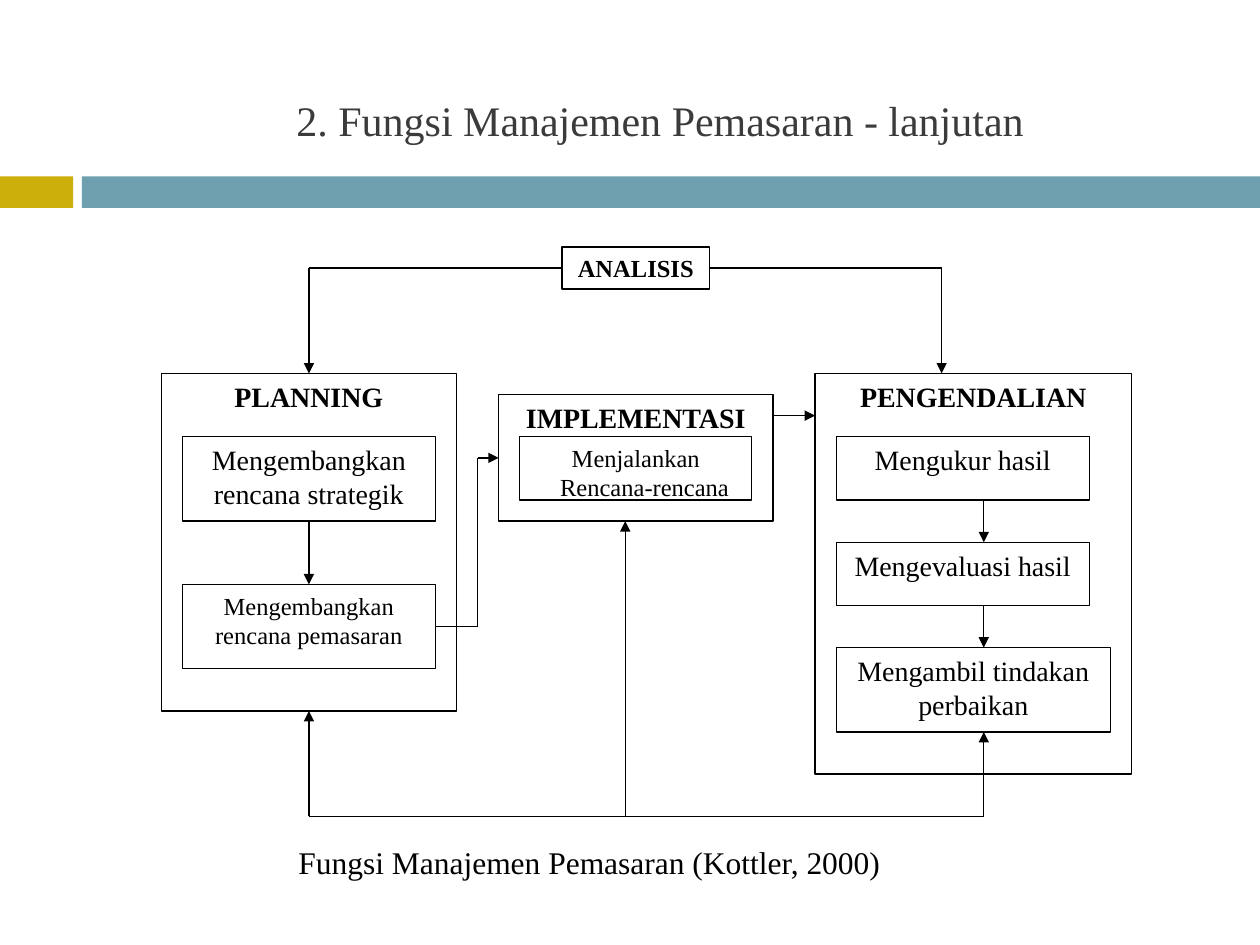
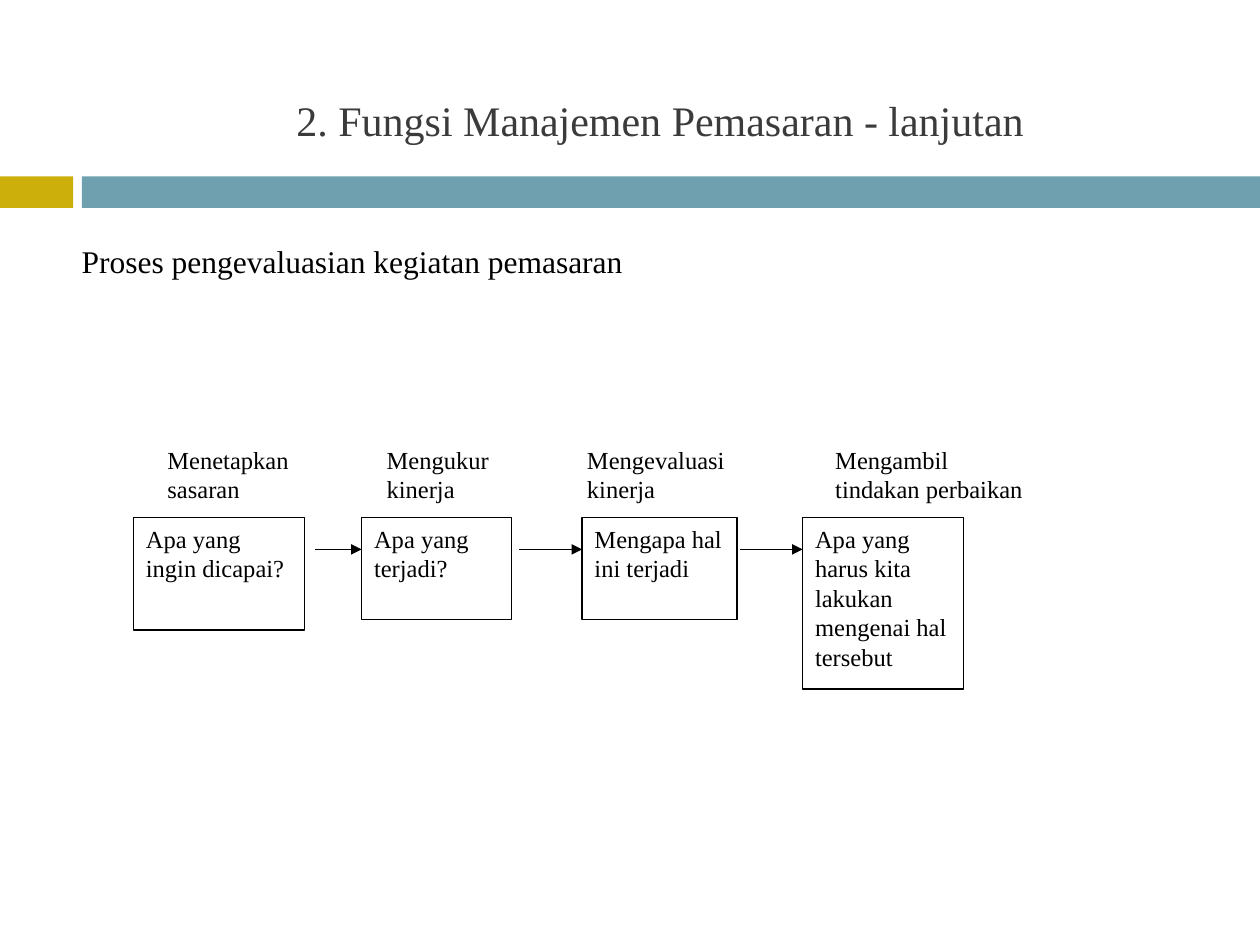
from itertools import pairwise

from lxml import etree
from pptx import Presentation
from pptx import util as u
from pptx.dml.color import RGBColor
from pptx.enum import shapes, text
from pptx.oxml.ns import qn

COLORS = {"ink": "000000", "title": "3B3B3B", "paper": "FFFFFF",
          "gold": "CCAF0A", "teal": "6EA0B0"}
FONT = "Times New Roman"
TITLE = "2. Fungsi Manajemen Pemasaran - lanjutan"
CENTER = text.PP_ALIGN.CENTER
LEFT = text.PP_ALIGN.LEFT
INCHES = (0, 0, 1)                           # left, top and cell size of a grid
FLOW_GRID = (1.28, 1.96, (8.98 - 1.28) / 46)  # 46 columns across the flow chart


def color(name):
    return RGBColor.from_string(COLORS[name])


def write(frame, content, size=14, bold=False, ink="ink", align=LEFT,
          anchor=text.MSO_ANCHOR.TOP, tabs=(), last_indent=0):
    """Fill a text frame, one paragraph for each line of the content."""
    frame.word_wrap = True
    frame.vertical_anchor = anchor
    for number, line in enumerate(content.split("\n")):
        paragraph = frame.add_paragraph() if number else frame.paragraphs[0]
        paragraph.alignment = align
        run = paragraph.add_run()
        run.text = line
        run.font.name, run.font.size, run.font.bold = FONT, u.Pt(size), bold
        run.font.color.rgb = color(ink)
        if tabs:
            stops = etree.SubElement(paragraph._p.get_or_add_pPr(), qn("a:tabLst"))
            for stop in tabs:
                etree.SubElement(stops, qn("a:tab"), pos=str(u.Inches(stop)), algn="l")
    if last_indent:
        paragraph._p.get_or_add_pPr().set("marL", str(u.Inches(last_indent)))


class Deck:
    """Holds the shared style, the current slide and its grid."""

    def __init__(self):
        self.presentation = Presentation()
        self.presentation.slide_width = u.Inches(10)
        self.presentation.slide_height = u.Inches(7.5)
        self.slide = None
        self.grid = INCHES

    def point(self, column, row):
        left, top, cell = self.grid
        return u.Inches(left + column * cell), u.Inches(top + row * cell)

    def area(self, column, row, columns, rows):
        cell = self.grid[2]
        return (*self.point(column, row), u.Inches(columns * cell), u.Inches(rows * cell))

    def new_slide(self):
        self.slide = self.presentation.slides.add_slide(self.presentation.slide_layouts[6])
        self.grid = INCHES
        self.box(0, 1.4, 0.58, 0.25, fill="gold", outline=None)
        self.box(0.65, 1.4, 9.35, 0.25, fill="teal", outline=None)
        self.label(0.78, 0.7, 8.92, 0.5, TITLE, size=24, ink="title",
                   align=CENTER, anchor=text.MSO_ANCHOR.MIDDLE)

    def box(self, *place, content="", fill="paper", outline="ink", **style):
        shape = self.slide.shapes.add_shape(shapes.MSO_SHAPE.RECTANGLE, *self.area(*place))
        shape.shadow.inherit = False
        shape.fill.solid()
        shape.fill.fore_color.rgb = color(fill)
        if outline:
            shape.line.color.rgb = color(outline)
            shape.line.width = u.Pt(0.75)
        else:
            shape.line.fill.background()
        if content:
            write(shape.text_frame, content, **style)

    def label(self, column, row, columns, rows, content, **style):
        shape = self.slide.shapes.add_textbox(*self.area(column, row, columns, rows))
        write(shape.text_frame, content, **style)

    def route(self, *points, arrow=True):
        """Join the points with straight lines; the last may end in an arrow."""
        for start, end in pairwise(points):
            connector = self.slide.shapes.add_connector(
                shapes.MSO_CONNECTOR.STRAIGHT, *self.point(*start), *self.point(*end))
            connector.line.color.rgb = color("ink")
            connector.line.width = u.Pt(0.75)
            etree.SubElement(connector._element.spPr, qn("a:effectLst"))
        if arrow:
            etree.SubElement(connector.line._get_or_add_ln(), qn("a:tailEnd"), type="triangle")


def functions_slide(deck):
    deck.new_slide()
    deck.label(2.27, 6.64, 4.87, 0.4, "Fungsi Manajemen Pemasaran (Kottler, 2000)", size=18)
    deck.grid = FLOW_GRID

    # Stages
    for place, name, size in (
            ((19, 0, 7, 2), "ANALISIS", 14),
            ((0, 6, 14, 16), "PLANNING", 16),
            ((16, 7, 13, 6), "IMPLEMENTASI", 16),
            ((31, 6, 15, 19), "PENGENDALIAN", 16)):
        deck.box(*place, content=name, size=size, bold=True, align=CENTER)

    # Steps inside the stages
    for place, step, size in (
            ((1, 9, 12, 4), "Mengembangkan\nrencana strategik", 16),
            ((1, 16, 12, 4), "Mengembangkan\nrencana pemasaran", 14),
            ((32, 9, 12, 3), "Mengukur hasil", 16),
            ((32, 14, 12, 3), "Mengevaluasi hasil", 16),
            ((32, 19, 13, 4), "Mengambil tindakan perbaikan", 16)):
        deck.box(*place, content=step, size=size, align=CENTER)
    deck.box(17, 9, 11, 3, content="Menjalankan\nRencana-rencana",
             align=CENTER, last_indent=0.14)

    # Flow from analysis through the stages
    deck.route((19, 1), (7, 1), (7, 6))
    deck.route((26, 1), (37, 1), (37, 6))
    deck.route((7, 13), (7, 16))
    deck.route((13, 18), (15, 18), (15, 10), (16, 10))
    deck.route((29, 8), (31, 8))
    deck.route((39, 12), (39, 14))
    deck.route((39, 17), (39, 19))

    # Feedback line with its three arrows
    deck.route((7, 27), (39, 27), arrow=False)
    for column, row in ((7, 22), (22, 13), (39, 23)):
        deck.route((column, 27), (column, row))


def evaluation_slide(deck):
    deck.new_slide()
    deck.label(0.55, 1.87, 6.72, 0.4, "Proses pengevaluasian kegiatan pemasaran", size=18)

    # Step names, set in columns by tab stops
    names = (("Menetapkan", "Mengukur", "Mengevaluasi", "Mengambil"),
             ("sasaran", "kinerja", "kinerja", "tindakan perbaikan"))
    deck.label(0.94, 3.48, 7.35, 0.81,
               "\n".join("\t" + "\t".join(line) for line in names),
               tabs=(0.29, 2.03, 3.62, 5.59))

    # Question for each step
    for left, width, height, question in (
            (1.06, 1.36, 0.89, "Apa yang ingin dicapai?"),
            (2.87, 1.19, 0.81, "Apa yang terjadi?"),
            (4.62, 1.23, 0.81, "Mengapa hal ini terjadi"),
            (6.37, 1.28, 1.36, "Apa yang harus kita lakukan mengenai hal tersebut")):
        deck.box(left, 4.11, width, height, content=question)
    for start, end in ((2.5, 2.87), (4.12, 4.62), (5.87, 6.37)):
        deck.route((start, 4.36), (end, 4.36))


def main():
    deck = Deck()
    functions_slide(deck)
    evaluation_slide(deck)
    deck.presentation.save("out.pptx")


if __name__ == "__main__":
    main()
